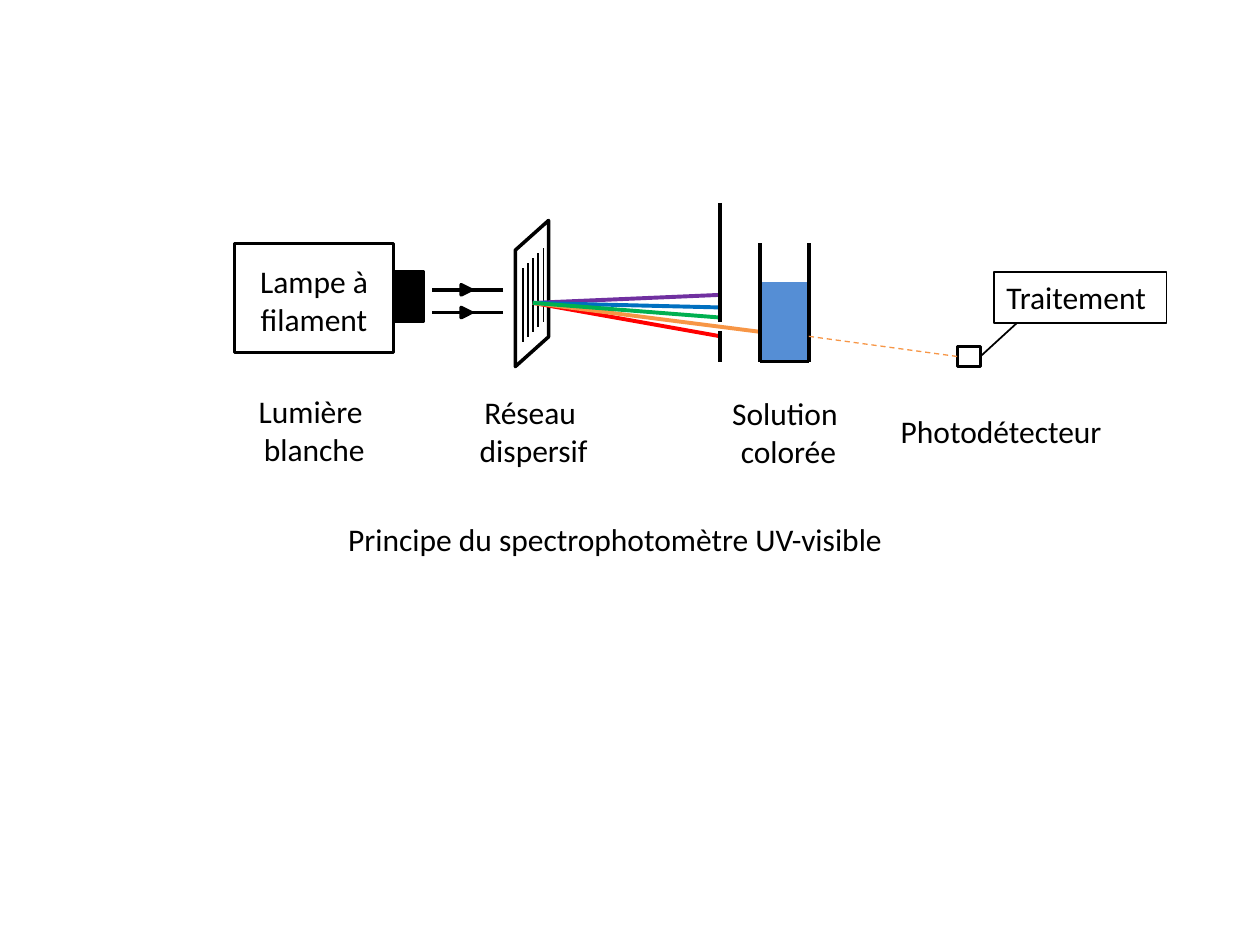
from lxml import etree
from pptx import Presentation
from pptx.dml.color import RGBColor
from pptx.enum import dml, shapes, text
from pptx.oxml.ns import qn
from pptx.util import Pt

COLORS = {
    "ink": "000000", "solution": "558ED5", "red": "FF0000", "violet": "7030A0",
    "blue": "0070C0", "orange": "F79646", "green": "00B050",
}


def rgb(name):
    return RGBColor.from_string(COLORS[name])


def style(shape, fill=None, outline="ink", weight=2):
    shape.shadow.inherit = False
    if fill:
        shape.fill.solid()
        shape.fill.fore_color.rgb = rgb(fill)
    else:
        shape.fill.background()
    if outline:
        shape.line.color.rgb = rgb(outline)
        shape.line.width = Pt(weight)
    else:
        shape.line.fill.background()
    return shape


def add_preset(slide, kind, box, **look):
    return style(slide.shapes.add_shape(kind, *map(Pt, box)), **look)


def add_rect(slide, box, **look):
    return add_preset(slide, shapes.MSO_SHAPE.RECTANGLE, box, **look)


def add_line(slide, start, end, color="ink", weight=2.25):
    line = slide.shapes.add_connector(
        shapes.MSO_CONNECTOR.STRAIGHT, *map(Pt, (*start, *end)))
    line.line.color.rgb = rgb(color)
    line.line.width = Pt(weight)
    etree.SubElement(line._element.spPr, qn("a:effectLst"))
    return line


def write(shape, lines, align):
    frame = shape.text_frame
    frame.word_wrap = True
    frame.vertical_anchor = text.MSO_ANCHOR.TOP
    for i, words in enumerate(lines):
        paragraph = frame.add_paragraph() if i else frame.paragraphs[0]
        paragraph.text = words
        paragraph.alignment = align
        paragraph.font.name = "Calibri"
        paragraph.font.size = Pt(18)
        paragraph.font.color.rgb = rgb("ink")


def add_label(slide, box, *lines, align=text.PP_ALIGN.CENTER):
    write(slide.shapes.add_textbox(*map(Pt, box)), lines, align)


def add_lamp(slide, box):
    x, y, w, h = box
    add_rect(slide, box)
    add_rect(slide, (x + w, y + 16.5, 17, 28), fill="ink")
    add_label(slide, (x + w / 2 - 68, y + 7, 136, 51), "Lampe à", "filament")


def add_white_light(slide, box):
    """Two parallel rays, on the top and bottom of the box, each with an arrow."""
    x, y, w, h = box
    size = 5.8
    for ray_y in (y, y + h):
        add_line(slide, (x + w, ray_y), (x, ray_y))
        arrow = add_preset(slide, shapes.MSO_SHAPE.ISOSCELES_TRIANGLE,
                           (x + 16.5, ray_y - size / 2, size, size), fill="ink")
        arrow.rotation = 90


def add_grating(slide, box):
    x, y, w, h = box
    slant = 17
    outline = slide.shapes.build_freeform(Pt(x), Pt(y + slant), scale=1.0)
    outline.add_line_segments([
        (Pt(x + w), Pt(y)), (Pt(x + w), Pt(y + h - slant)), (Pt(x), Pt(y + h))])
    style(outline.convert_to_shape())
    for i in range(5):
        groove_x, top = x + 4.3 + 2.9 * i, y + 27.4 - 2.9 * i
        add_line(slide, (groove_x, top), (groove_x, top + 42), weight=0.75)


def add_spectrum(slide, box):
    """Rays fan out from the left of the box; the orange one passes the slit."""
    x, y, w, h = box
    rays = [("red", w, h), ("violet", w, 0), ("blue", w, 7.2),
            ("orange", w + 21.6, 21), ("green", w, 13)]
    for color, reach, drop in rays:
        add_line(slide, (x, y + 4.6), (x + reach, y + drop), color)


def add_slit_screen(slide, box):
    x, y, _, h = box
    add_line(slide, (x, y), (x, y + 68.3))
    add_line(slide, (x, y + 73.4), (x, y + h))


def add_cuvette(slide, box):
    x, y, w, h = box
    add_rect(slide, (x, y + 22.3, w, h - 22.3), fill="solution", outline=None)
    add_line(slide, (x + w, y + h), (x, y + h))
    for wall_x in (x, x + w):
        add_line(slide, (wall_x, y), (wall_x, y + h))


def add_detection(slide, box):
    """Detector at the bottom left of the box, processing unit at its top right."""
    x, y, w, h = box
    detector = add_rect(slide, (x, y + h - 11.5, 13, 11.5))
    beam = add_line(slide, (x - 85, y + 36.7), (x, y + h - 5.75), "orange", 0.75)
    beam.line.dash_style = dml.MSO_LINE.DASH
    beam.end_connect(detector, 1)
    cable = add_line(slide, (x + 13, y + h - 5.75), (x + 34, y + 29), weight=1)
    cable.begin_connect(detector, 3)
    processing = add_rect(slide, (x + 20.8, y, w - 20.8, 29), weight=1)
    write(processing, ["Traitement"], text.PP_ALIGN.LEFT)


def add_captions(slide, box):
    x, y, w, h = box
    add_label(slide, (x, y, 136, 51), "Lumière ", "blanche")
    add_label(slide, (x + 153.4, y + 0.7, 80, 51), "Réseau ", "dispersif")
    add_label(slide, (x + 260, y + 1.4, 158, 51), "Solution ", "colorée")
    add_label(slide, (x + w - 135, y + 11.5, 135, 51), "Photodétecteur",
              align=text.PP_ALIGN.LEFT)
    add_label(slide, (x + 39, y + h - 29, 402, 29),
              "Principe du spectrophotomètre UV-visible")


def main():
    deck = Presentation()
    deck.slide_width, deck.slide_height = Pt(720), Pt(540)
    slide = deck.slides.add_slide(deck.slide_layouts[6])
    add_lamp(slide, (134, 139, 91, 62.5))
    add_white_light(slide, (247, 165.6, 40.5, 13))
    add_grating(slide, (294.5, 126, 19, 83.5))
    add_spectrum(slide, (304.5, 168.5, 107.3, 23.7))
    add_slit_screen(slide, (411.5, 116, 0, 90.6))
    add_cuvette(slide, (434.2, 139, 28, 67.6))
    add_detection(slide, (547.2, 155.5, 119.4, 54))
    add_captions(slide, (111.6, 220.3, 531, 102.5))
    deck.save("out.pptx")


if __name__ == "__main__":
    main()
